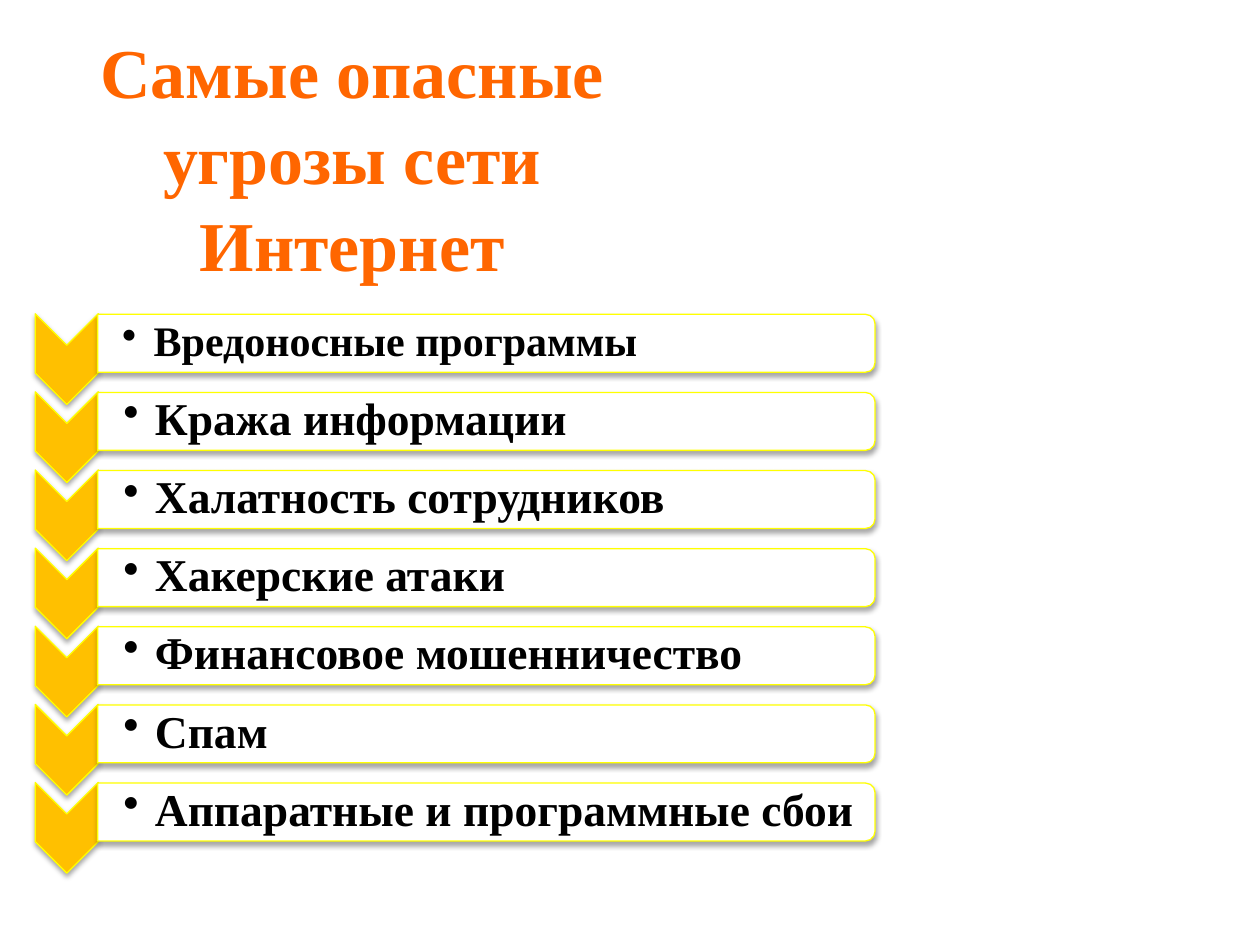
from lxml import etree
from pptx import Presentation
from pptx.dml.color import RGBColor
from pptx.enum import shapes, text
from pptx.oxml import parse_xml
from pptx.oxml.ns import nsdecls, qn
from pptx.util import Inches, Pt

ORANGE = RGBColor(0xFF, 0x66, 0x00)
AMBER = RGBColor(0xFF, 0xC0, 0x00)
YELLOW = RGBColor(0xFF, 0xFF, 0x00)
WHITE = RGBColor(0xFF, 0xFF, 0xFF)
BLACK = RGBColor(0x00, 0x00, 0x00)
FONT = "Times New Roman"
ROW_STEP = 0.62

THREATS = [
    "Вредоносные программы",
    "Кража информации",
    "Халатность сотрудников",
    "Хакерские атаки",
    "Финансовое мошенничество",
    "Спам",
    "Аппаратные и программные сбои",
]

SHADOW = f"""<a:effectLst {nsdecls("a")}>
  <a:outerShdw blurRad="{Pt(3.1)}" dist="{Pt(1.8)}" dir="5400000" rotWithShape="0">
    <a:srgbClr val="000000"><a:alpha val="35000"/></a:srgbClr>
  </a:outerShdw>
</a:effectLst>"""


def add_turned_shape(kind, left, top, width, height, fill):
    """Add a shape turned a quarter clockwise, with yellow edge and soft shadow."""
    shape = page.shapes.add_shape(
        kind, Inches(left), Inches(top), Inches(width), Inches(height))
    shape.rotation = 90 if kind == shapes.MSO_SHAPE.CHEVRON else 90.0
    shape.fill.solid()
    shape.fill.fore_color.rgb = fill
    shape.line.color.rgb = YELLOW
    shape.line.width = Pt(0.75)
    shape._element.spPr.append(parse_xml(SHADOW))


def add_text(words, left, top, width, height, size, color):
    box = page.shapes.add_textbox(
        Inches(left), Inches(top), Inches(width), Inches(height))
    frame = box.text_frame
    frame.text = words
    frame.word_wrap = True
    frame.vertical_anchor = text.MSO_ANCHOR.MIDDLE
    font = frame.paragraphs[0].runs[0].font
    font.name = FONT
    font.size = Pt(size)
    font.bold = True
    font.color.rgb = color
    return frame


deck = Presentation()
deck.slide_width = Inches(10)
deck.slide_height = Inches(7.5)
page = deck.slides.add_slide(deck.slide_layouts[6])

title = add_text("Самые опасные угрозы сети Интернет", 0.2, 0.21, 5.19, 2.05, 40, ORANGE)
title.paragraphs[0].alignment = text.PP_ALIGN.CENTER
title.paragraphs[0].line_spacing = 1.03

for row, threat in enumerate(THREATS):
    offset = row * ROW_STEP
    add_turned_shape(shapes.MSO_SHAPE.CHEVRON, 0.17, 2.6 + offset, 0.72, 0.5, AMBER)
    add_turned_shape(shapes.MSO_SHAPE.ROUND_2_SAME_RECTANGLE,
                     3.63, -0.36 + offset, 0.46, 6.17, WHITE)

    size = 24 if row == 0 else 26
    frame = add_text(threat, 0.78, 2.51 + offset, 6.14, 0.42, size, BLACK)
    frame.margin_left = Inches(0.19 if row == 0 else 0.2)
    frame.margin_top = frame.margin_right = frame.margin_bottom = Inches(0.02)
    para = frame.paragraphs[0]
    properties = para._p.get_or_add_pPr()
    properties.set("marL", str(Inches(0.25)))
    properties.set("indent", str(-Inches(0.25)))
    etree.SubElement(properties, qn("a:buChar")).set("char", "•")
    para.level = 1
    para.line_spacing = 0.9

deck.save("out.pptx")
